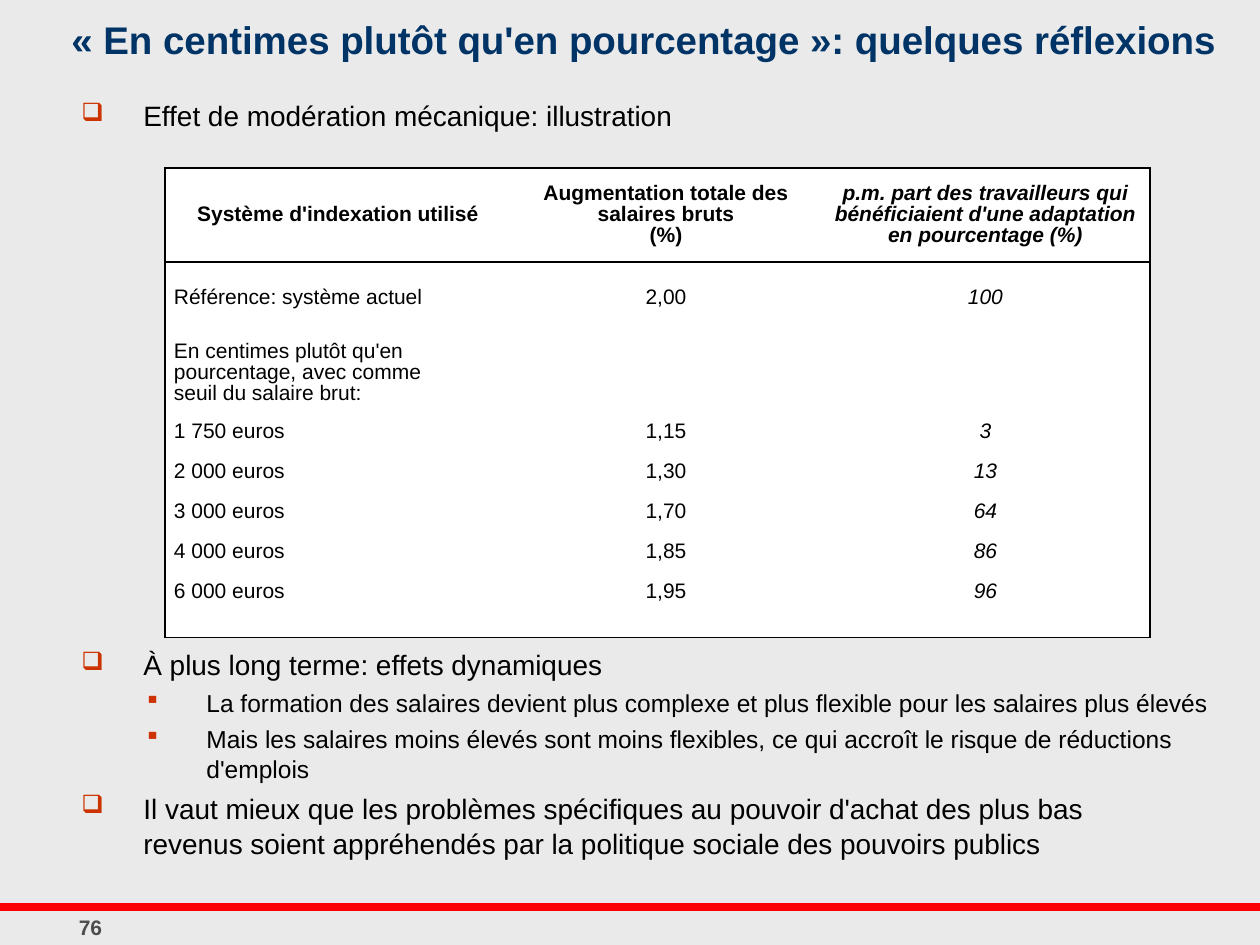
"""Build the slide on indexation in cents rather than in percentages."""
from dataclasses import dataclass

import lxml.etree
import pptx
import pptx.dml.color
import pptx.enum.shapes
import pptx.enum.text
import pptx.oxml
import pptx.oxml.ns
import pptx.util

EMU_PER_PX = 914400 / 126
FONT = "Arial"
COLORS = {
    "background": "EAEAEA",
    "title": "003366",
    "text": "000000",
    "bullet": "CC3300",
    "rule": "FF0000",
    "number": "4D4D4D",
    "cell": "FFFFFF",
}
ALIGN = pptx.enum.text.PP_ALIGN


@dataclass(frozen=True)
class Area:
    left: int
    top: int
    width: int
    height: int


@dataclass(frozen=True)
class Level:
    number: int
    char: str
    size: int
    margin: int


@dataclass(frozen=True)
class Item:
    level: Level
    text: str


MAIN = Level(0, "❑", 16, 62)
SUB = Level(1, "▪", 14, 125)
HANGING = 62

OPENING = [Item(MAIN, "Effet de modération mécanique: illustration")]
CONCLUSIONS = [
    Item(MAIN, "À plus long terme: effets dynamiques"),
    Item(SUB, "La formation des salaires devient plus complexe et plus flexible pour les salaires plus élevés"),
    Item(SUB, "Mais les salaires moins élevés sont moins flexibles, ce qui accroît le risque de réductions d'emplois"),
    Item(MAIN, "Il vaut mieux que les problèmes spécifiques au pouvoir d'achat des plus bas\n"
               "revenus soient appréhendés par la politique sociale des pouvoirs publics"),
]

EMPTY = ("", "", "")
ROWS = [
    ("Système d'indexation utilisé",
     "Augmentation totale des salaires bruts\n(%)",
     "p.m. part des travailleurs qui bénéficiaient d'une adaptation en pourcentage (%)"),
    EMPTY,
    ("Référence: système actuel", "2,00", "100"),
    EMPTY,
    ("En centimes plutôt qu'en pourcentage, avec comme\nseuil du salaire brut:", "", ""),
    ("1 750 euros", "1,15", "3"),
    ("2 000 euros", "1,30", "13"),
    ("3 000 euros", "1,70", "64"),
    ("4 000 euros", "1,85", "86"),
    ("6 000 euros", "1,95", "96"),
    EMPTY,
]
ROW_HEIGHTS = [94, 22, 22, 22, 78] + [40] * 5 + [21]
COLUMN_WIDTHS = [346, 310, 329]


def emu(px: int) -> int:
    return round(px * EMU_PER_PX)


def place(area: Area) -> list[int]:
    return [emu(px) for px in (area.left, area.top, area.width, area.height)]


def rgb(name: str) -> pptx.dml.color.RGBColor:
    return pptx.dml.color.RGBColor.from_string(COLORS[name])


def set_font(para, size: int, color: str, bold: bool = False, italic: bool = False) -> None:
    font = para.font
    font.name, font.size, font.bold, font.italic = FONT, pptx.util.Pt(size), bold, italic
    font.color.rgb = rgb(color)


def add_label(page, area: Area, text: str, size: int, color: str, align) -> None:
    box = page.shapes.add_textbox(*place(area))
    box.text_frame.word_wrap = True
    para = box.text_frame.paragraphs[0]
    para.text, para.alignment = text, align
    set_font(para, size, color, bold=True)


def add_bullet(para, level: Level) -> None:
    properties = para._p.get_or_add_pPr()
    properties.set("marL", str(emu(level.margin)))
    properties.set("indent", str(-emu(HANGING)))
    namespace = pptx.oxml.ns.nsdecls("a")
    for xml in (
        f'<a:buClr {namespace}><a:srgbClr val="{COLORS["bullet"]}"/></a:buClr>',
        f'<a:buSzPct {namespace} val="90000"/>',
        f'<a:buChar {namespace} char="{level.char}"/>',
    ):
        properties.append(pptx.oxml.parse_xml(xml))


def add_list(page, area: Area, items: list[Item]) -> None:
    frame = page.shapes.add_textbox(*place(area)).text_frame
    frame.word_wrap = True
    for index, item in enumerate(items):
        para = frame.add_paragraph() if index else frame.paragraphs[0]
        para.text, para.level = item.text, item.level.number
        add_bullet(para, item.level)
        para.line_spacing = 1.05
        if index:
            para.space_before = pptx.util.Pt(item.level.size * 0.2)
        set_font(para, item.level.size, "text")


def set_borders(cell, sides: dict[str, bool]) -> None:
    properties = cell._tc.get_or_add_tcPr()
    for index, (side, visible) in enumerate(sides.items()):
        line = lxml.etree.Element(pptx.oxml.ns.qn(f"a:ln{side}"), w="12700")
        fill = lxml.etree.SubElement(line, pptx.oxml.ns.qn("a:solidFill" if visible else "a:noFill"))
        if visible:
            lxml.etree.SubElement(fill, pptx.oxml.ns.qn("a:srgbClr"), val=COLORS["text"])
        properties.insert(index, line)


def fill_cell(cell, text: str, row: int, column: int) -> None:
    cell.text_frame.text = text
    cell.vertical_anchor = pptx.enum.text.MSO_ANCHOR.MIDDLE
    cell.margin_left = cell.margin_right = emu(9)
    cell.margin_top = cell.margin_bottom = 0
    for para in cell.text_frame.paragraphs:
        para.alignment = ALIGN.CENTER if row == 0 or column else ALIGN.LEFT
        para.line_spacing = pptx.util.Pt(12)
        set_font(para, 12, "text", bold=row == 0, italic=column == 2)
    cell.fill.solid()
    cell.fill.fore_color.rgb = rgb("cell")
    set_borders(cell, {
        "L": column == 0,
        "R": column == len(COLUMN_WIDTHS) - 1,
        "T": row <= 1,
        "B": row in (0, len(ROWS) - 1),
    })


def add_wage_table(page, left: int, top: int) -> None:
    area = Area(left, top, sum(COLUMN_WIDTHS), sum(ROW_HEIGHTS))
    table = page.shapes.add_table(len(ROWS), len(COLUMN_WIDTHS), *place(area)).table
    table.first_row = table.horz_banding = False
    for column, width in zip(table.columns, COLUMN_WIDTHS):
        column.width = emu(width)
    for row, height in zip(table.rows, ROW_HEIGHTS):
        row.height = emu(height)
    for row, texts in enumerate(ROWS):
        for column, text in enumerate(texts):
            fill_cell(table.cell(row, column), text, row, column)


def add_rule(page, top: int, width: int) -> None:
    rule = page.shapes.add_connector(
        pptx.enum.shapes.MSO_CONNECTOR.STRAIGHT, 0, emu(top), emu(width), emu(top))
    rule.line.color.rgb = rgb("rule")
    rule.line.width = pptx.util.Pt(4.5)
    lxml.etree.SubElement(rule._element.spPr, pptx.oxml.ns.qn("a:effectLst"))


def main() -> None:
    deck = pptx.Presentation()
    deck.slide_width, deck.slide_height = emu(1260), emu(945)
    page = deck.slides.add_slide(deck.slide_layouts[6])
    page.background.fill.solid()
    page.background.fill.fore_color.rgb = rgb("background")
    add_rule(page, 907, 1260)
    add_label(page, Area(59, 10, 1201, 52),
              "« En centimes plutôt qu'en pourcentage »: quelques réflexions", 22, "title", ALIGN.LEFT)
    add_label(page, Area(35, 908, 111, 37), "76", 12, "number", ALIGN.CENTER)
    add_wage_table(page, 165, 168)
    add_list(page, Area(69, 91, 1191, 64), OPENING)
    add_list(page, Area(69, 640, 1191, 64), CONCLUSIONS)
    deck.save("out.pptx")


if __name__ == "__main__":
    main()
